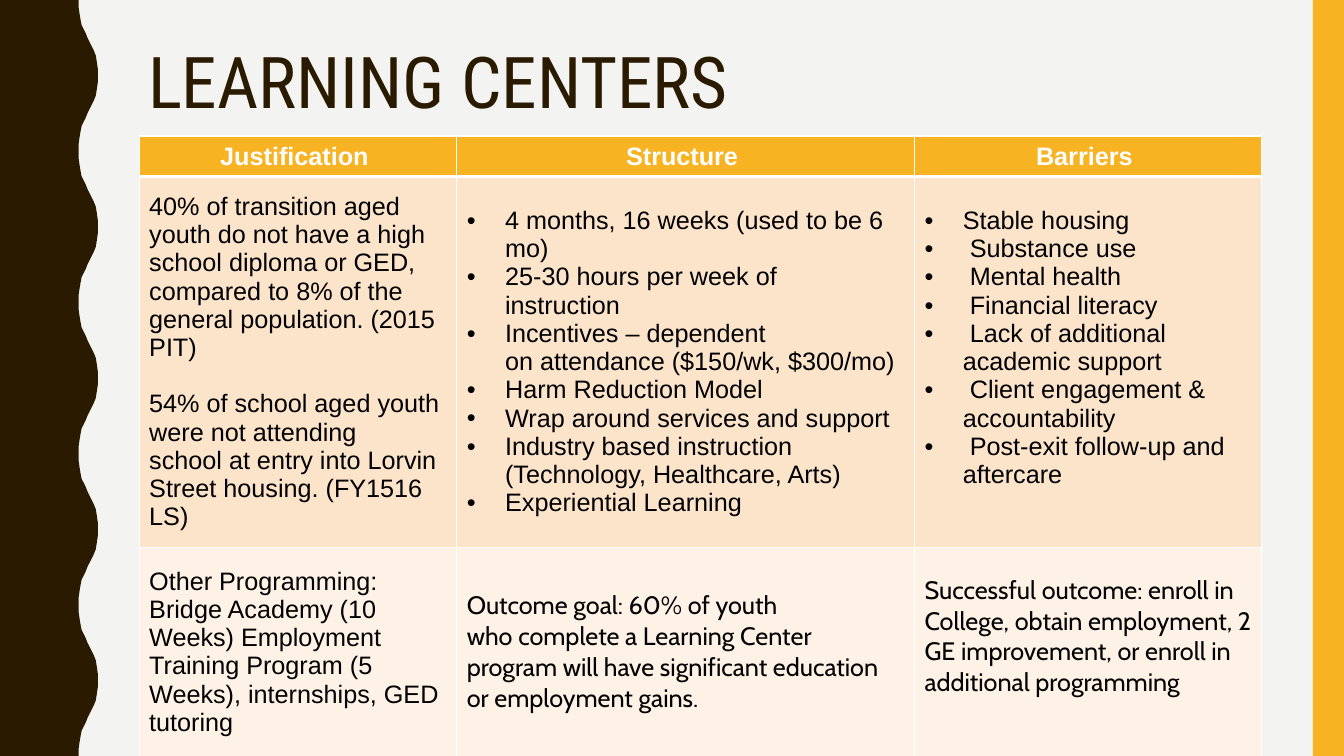
from lxml import etree
from pptx import Presentation
from pptx import util as u
from pptx.dml.color import RGBColor
from pptx.enum import shapes, text
from pptx.oxml import ns

COLORS = {
    "paper": "F3F3F2", "brown": "2A1A00", "gold": "F8B323",
    "peach": "FCE4CB", "cream": "FEF2E7", "white": "FFFFFF", "black": "000000",
}
HARD_SPACE = chr(160)  # written as ~ in the wording below


def color(name):
    return RGBColor.from_string(COLORS[name])


class SlideBuilder:
    body_size = 18
    indent = 0.38

    def __init__(self, slide):
        self.slide = slide
        slide.background.fill.solid()
        slide.background.fill.fore_color.rgb = color("paper")

    def paint(self, shape, fill):
        shape.shadow.inherit = False
        shape.fill.solid()
        shape.fill.fore_color.rgb = color(fill)
        shape.line.fill.background()

    def outline(self, points, fill):
        points = [(u.Inches(x), u.Inches(y)) for x, y in points]
        builder = self.slide.shapes.build_freeform(*points[0])
        builder.add_line_segments(points[1:], close=True)
        self.paint(builder.convert_to_shape(), fill)

    def bar(self, left, top, width, height, fill):
        box = [u.Inches(v) for v in (left, top, width, height)]
        self.paint(self.slide.shapes.add_shape(shapes.MSO_SHAPE.RECTANGLE, *box), fill)

    def run(self, paragraph, words, size, font, ink, bold=False):
        run = paragraph.add_run()
        run.text = words.replace("~", HARD_SPACE)
        run.font.size, run.font.name, run.font.bold = u.Pt(size), font, bold
        run.font.color.rgb = color(ink)

    def title(self, words, left, top, width, height):
        box = [u.Inches(v) for v in (left, top, width, height)]
        frame = self.slide.shapes.add_textbox(*box).text_frame
        frame.word_wrap = True
        frame.paragraphs[0].line_spacing = 0.9
        self.run(frame.paragraphs[0], words, 51, "Roboto Condensed", "brown")

    def table(self, left, top, widths, heights):
        table = self.slide.shapes.add_table(
            len(heights), len(widths), u.Inches(left), u.Inches(top),
            u.Inches(sum(widths)), u.Inches(sum(heights))).table
        table.first_row = table.horz_banding = False
        for column, width in zip(table.columns, widths):
            column.width = u.Inches(width)
        for row, height in zip(table.rows, heights):
            row.height = u.Inches(height)
        return table

    def borders(self, cell, top, bottom):
        props = cell._tc.get_or_add_tcPr()
        for i, (side, points) in enumerate(zip("LRTB", (1, 1, top, bottom))):
            line = etree.Element(ns.qn(f"a:ln{side}"), w=str(u.Pt(points)))
            fill = etree.SubElement(line, ns.qn("a:solidFill"))
            etree.SubElement(fill, ns.qn("a:srgbClr"), val=COLORS["white"])
            props.insert(i, line)

    def bullet(self, paragraph):
        props = paragraph._p.get_or_add_pPr()
        props.set("marL", str(u.Inches(self.indent)))
        props.set("indent", str(-u.Inches(self.indent)))
        etree.SubElement(props, ns.qn("a:buFont"), typeface="Arial")
        etree.SubElement(props, ns.qn("a:buChar"), char="•")

    def cell(self, cell, lines, fill, font="Arial", header=False, bullets=False,
             gap=0, below=0.05):
        cell.fill.solid()
        cell.fill.fore_color.rgb = color(fill)
        cell.vertical_anchor = text.MSO_ANCHOR.MIDDLE
        cell.margin_bottom = u.Inches(below)
        frame = cell.text_frame
        for i, words in enumerate(lines):
            paragraph = frame.add_paragraph() if i else frame.paragraphs[0]
            if header:
                paragraph.alignment = text.PP_ALIGN.CENTER
            if i and gap:
                paragraph.space_before = u.Pt(gap)
            if bullets:
                self.bullet(paragraph)
            self.run(paragraph, words, self.body_size, font,
                     "white" if header else "black", header)


HEADINGS = ["Justification~", "Structure~", "Barriers~"]
JUSTIFICATION = [
    "40% of transition aged youth do not have a high school diploma or GED, "
    "compared to 8% of the general population.~(2015 PIT)~",
    "54% of school aged youth were~not attending school~at entry into "
    "Lorvin Street housing.~(FY1516 LS)~",
]
STRUCTURE = [
    "4 months, 16 weeks (used to be 6 mo)",
    "25-30 hours per week of instruction~~",
    "Incentives – dependent on~attendance~($150/wk, $300/mo)~",
    "Harm Reduction Model~~",
    "Wrap around services and support~",
    "Industry based instruction (Technology, Healthcare, Arts)",
    "Experiential Learning",
]
BARRIERS = [
    "Stable housing~~",
    "~Substance use~~~",
    "~Mental health~~",
    "~Financial literacy~~",
    "~Lack of additional academic support~",
    "~Client engagement & accountability~~",
    "~Post-exit follow-up and aftercare~~",
]
PROGRAMMING = ["Other Programming: Bridge Academy (10 Weeks) Employment Training "
               "Program (5 Weeks), internships, GED tutoring"]
GOAL = ["Outcome goal: 60% of youth who~complete a Learning~Center program~will have "
        "significant education or~employment gains.~"]
SUCCESS = ["Successful outcome: enroll in College, obtain employment, "
           "2 GE~improvement, or enroll in additional programming"]

# Half of one wave, from trough to crest
RISE = [(0.78, 0), (0.78, 0.07), (0.79, 0.14), (0.8, 0.2), (0.81, 0.25), (0.83, 0.29),
        (0.85, 0.33), (0.87, 0.38), (0.89, 0.42), (0.91, 0.46), (0.93, 0.5),
        (0.95, 0.55), (0.96, 0.61), (0.97, 0.68), (0.97, 0.75)]
PERIOD = 1.5


def main():
    deck = Presentation()
    deck.slide_width, deck.slide_height = u.Inches(13.33), u.Inches(7.5)
    page = SlideBuilder(deck.slides.add_slide(deck.slide_layouts[6]))

    # Wavy left edge and gold right edge
    wave = RISE + [(x, PERIOD - y) for x, y in reversed(RISE[1:-1])]
    edge = [(x, n * PERIOD + y) for n in range(5) for x, y in wave]
    page.outline([(0, 0), *edge, (0.78, 7.5), (0, 7.5)], "brown")
    page.bar(13.02, 0, 0.31, 7.5, "gold")

    # Title
    page.title("LEARNING CENTERS", 1.37, 0.42, 11.13, 1.63)

    # Program table
    program = page.table(1.38, 1.35, [3.15, 4.54, 3.44], [0.39, 3.46, 2.08])
    for col, heading in enumerate(HEADINGS):
        page.cell(program.cell(0, col), [heading], "gold", header=True)
    page.cell(program.cell(1, 0), JUSTIFICATION, "peach", gap=20)
    page.cell(program.cell(1, 1), STRUCTURE, "peach", bullets=True)
    page.cell(program.cell(1, 2), BARRIERS, "peach", bullets=True, below=0.33)
    page.cell(program.cell(2, 0), PROGRAMMING, "cream")
    page.cell(program.cell(2, 1), GOAL, "cream", font="Cabin")
    page.cell(program.cell(2, 2), SUCCESS, "cream", font="Cabin", below=0.36)

    # White rules, heavier under the headings
    rules = [1, 3, 1, 1]
    for row in range(3):
        for col in range(3):
            page.borders(program.cell(row, col), rules[row], rules[row + 1])

    deck.save("out.pptx")


if __name__ == "__main__":
    main()
